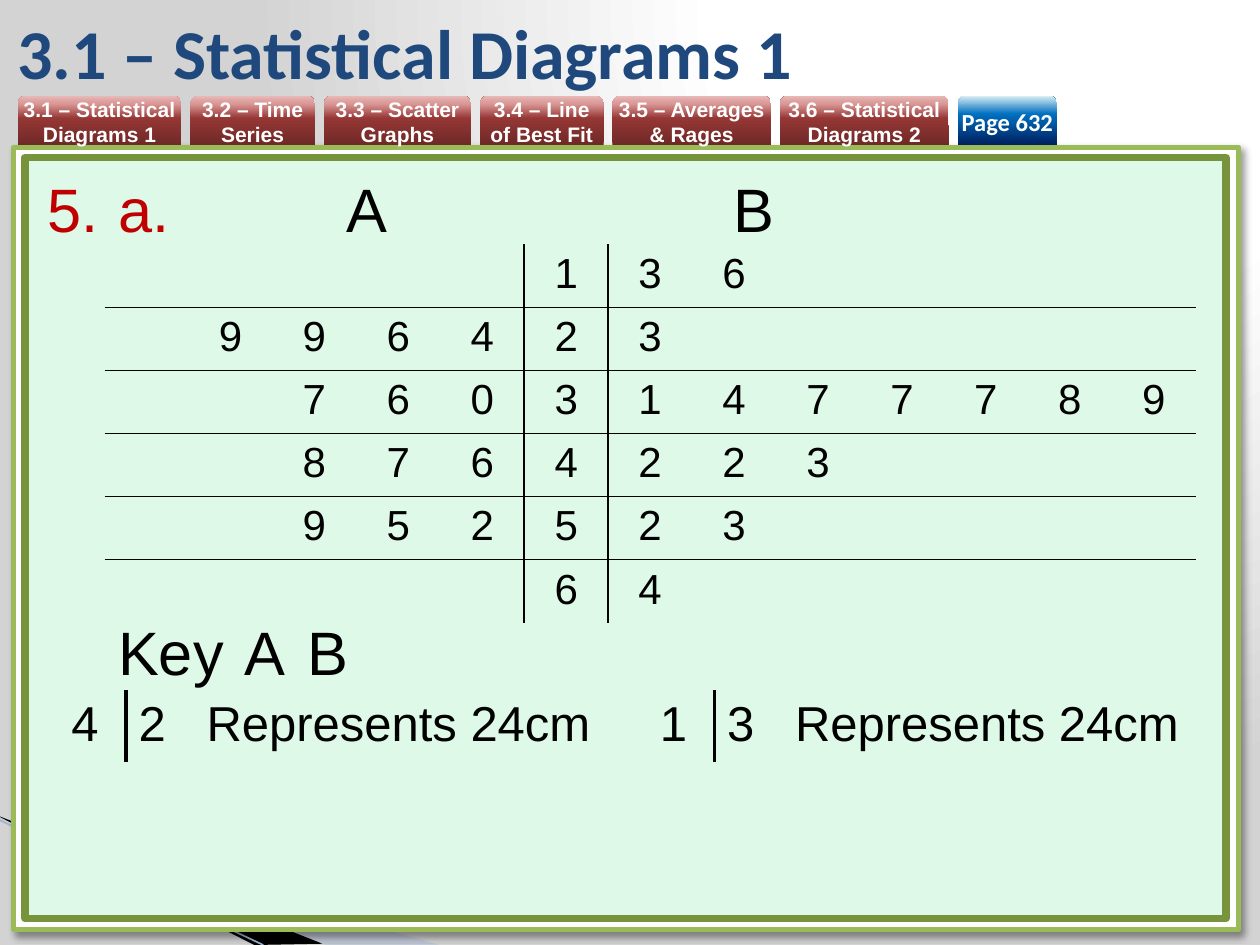
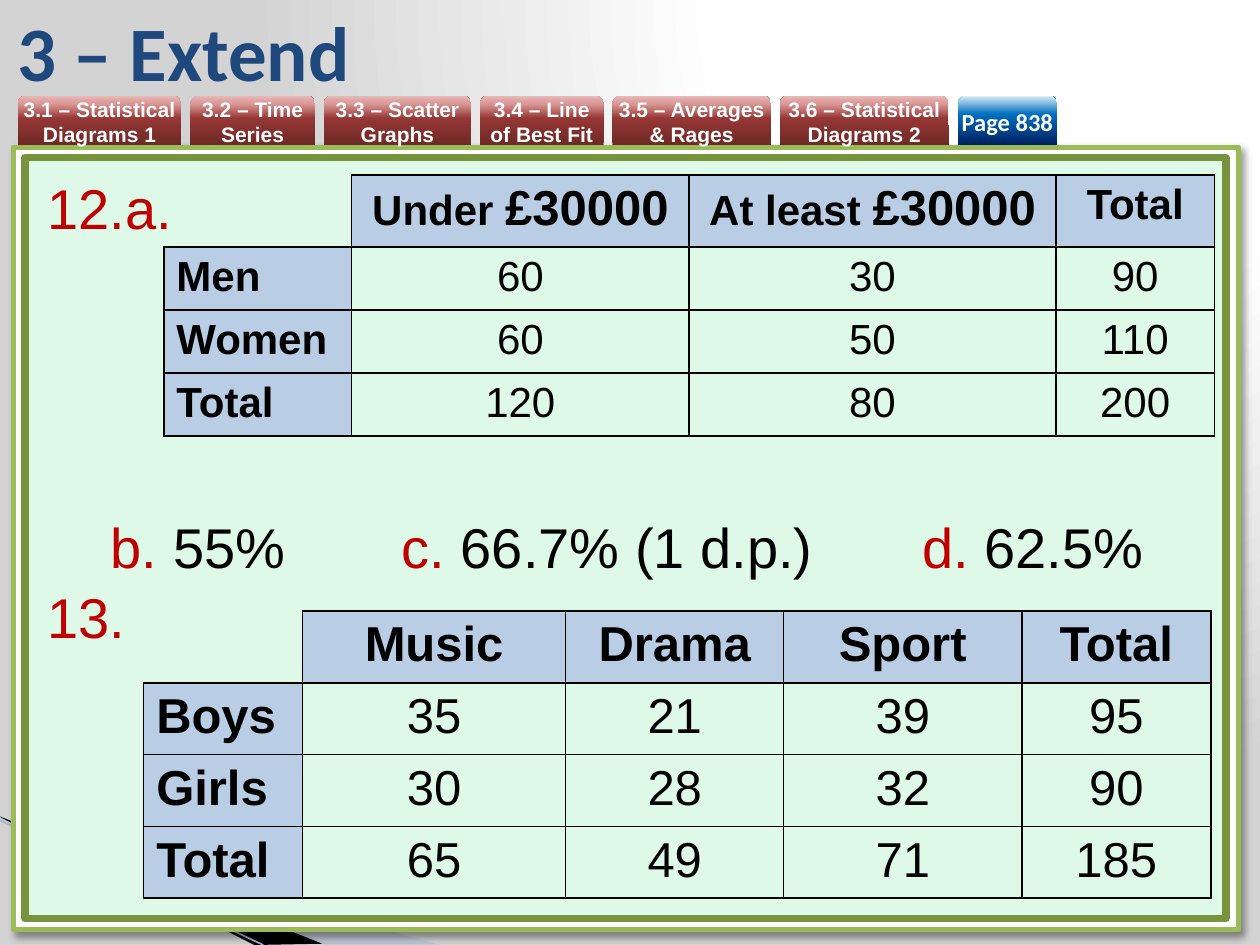
from pptx import Presentation
from pptx.dml.color import RGBColor
from pptx.enum.shapes import MSO_CONNECTOR, MSO_SHAPE
from pptx.enum.text import MSO_ANCHOR, PP_ALIGN
from pptx.oxml import parse_xml
from pptx.oxml.ns import nsdecls, qn
from pptx.util import Inches, Pt

C = {"black": "000000", "white": "FFFFFF", "red": "C00000", "title": "1F497D",
     "ray": "A7B9DB", "ray_line": "9EB3D6", "frame": "9BBB59", "panel": "DFF9E8",
     "panel_line": "77933C", "head": "B9CDE5"}
UP = '<a:lin ang="16200000" scaled="0"/>'
CORNER = '<a:path path="circle"><a:fillToRect l="65000" t="0" r="0" b="98000"/></a:path>'
GRADIENTS = {
    "page": ([(0, "FFFFFF"), (40, "FFFFFF"), (100, "D3D3D3")], CORNER),
    "topic": ([(0, "6F2927"), (54, "953735"), (83, "D99694"), (100, "E6B9B8")], UP),
    "number": ([(0, "002060"), (63, "0070C0"), (100, "DBEEF4")], UP),
}
TOPICS = [("3.1 – Statistical Diagrams 1", 1.3), ("3.2 – Time Series", 0.99),
          ("3.3 – Scatter Graphs", 1.17), ("3.4 – Line of Best Fit", 0.98),
          ("3.5 – Averages & Rages", 1.26), ("3.6 – Statistical Diagrams 2", 1.34)]
NO_STYLE = "{2D5ABB26-0587-4C30-8999-92F81FD0307C}"

# Slide grid: 10 columns by 7.5 rows
prs = Presentation()
prs.slide_width, prs.slide_height = Inches(10), Inches(7.5)
COL = prs.slide_width / 10


def grid(*units):
    return [round(u * COL) for u in units]


def write(p, runs, size, color="black", bold=False, font="Arial", align=None):
    """Add runs of (text, changed colour or size) to a paragraph."""
    p.alignment = align
    for text, change in runs:
        r = p.add_run()
        r.text = text
        r.font.name, r.font.bold = font, bold
        r.font.size = Pt(change if isinstance(change, int) else size)
        r.font.color.rgb = RGBColor.from_string(C[change if isinstance(change, str) else color])


# Stem-and-leaf rows: leaves of A, stem, leaves of B
STEMS = [("", "1", "36"), ("9964", "2", "3"), ("760", "3", "1477789"),
         ("876", "4", "223"), ("952", "5", "23"), ("", "6", "4")]
stem_rows = [list(a.rjust(5) + stem + b.ljust(7)) for a, stem, b in STEMS]
stem = dict(kind="stem", at=(0.83, 1.94), cols=[8.66 / 13] * 13, rows=[0.5] * 6,
            size=24, line=1, cells=stem_rows)
keys = [dict(kind="key", at=(left, 5.48), cols=[0.65, 3.91], rows=[0.57], size=28,
             line=2.25, cells=[[number, leaf + "\tRepresents 24cm"]])
        for left, number, leaf in [(0.35, "4", "2"), (5.02, "1", "3")]]
salaries = dict(kind="two-way", at=(1.3, 1.39), cols=[1.49, 2.68, 2.91, 1.26],
                rows=[0.57] + [0.5] * 3, size=24, line=1, cells=[
                    ["", [("Under ", None), ("£30000", 28)],
                     [("At least ", None), ("£30000", 28)], "Total"],
                    ["Men", "60", "30", "90"],
                    ["Women", "60", "50", "110"],
                    ["Total", "120", "80", "200"]])
activities = dict(kind="two-way", at=(1.14, 4.85), cols=[1.26, 2.09, 1.73, 1.89, 1.5],
                  rows=[0.57] * 4, size=28, line=1, cells=[
                      ["", "Music", "Drama", "Sport", "Total"],
                      ["Boys", "35", "21", "39", "95"],
                      ["Girls", "30", "28", "32", "90"],
                      ["Total", "65", "49", "71", "185"]])

# Paragraphs: space before, left margin, hanging indent, numbering, tab stops, runs
SLIDES = [
    dict(title="3.1 – Statistical Diagrams 1", title_size=40, page="Page 632",
         top=1.31, height=4.22, size=35, tables=[stem] + keys, paragraphs=[
             (0, 0.56, 0.56, ("arabicPeriod", 5), [2.37, 5.44],
              [("a.", "red"), ("\tA\tB", None)]),
             (211, 0.56, 0, None, [2.48, 5.44], [("Key\tA\tB", None)])]),
    dict(title="3 – Extend", title_size=44, page="Page 838",
         top=1.33, height=3.87, size=32, tables=[salaries, activities], paragraphs=[
             (0, 0.57, 0.57, ("arabicPeriod", 12), [], [("a.", "red")]),
             (155, 1, 0.5, ("alphaLcPeriod", 2), [2.81, 6.94],
              [("55%\t", None), ("c.", "red"), (" 66.7% (1 d.p.)\t", None),
               ("d.", "red"), (" 62.5%", None)]),
             (1.5, 0, 0, None, [], [("13.", "red")])]),
]

for page in SLIDES:
    s = prs.slides.add_slide(prs.slide_layouts[6])
    s.background.fill.gradient()
    gradients = [(s._element, "page")]

    # Rays in the lower left corner
    for color, alpha, points in [
            ("ray", 40, [(0, 6.5), (3.49, 7.5), (2.59, 7.5), (0, 6.49)]),
            ("black", 100, [(0, 6.48), (2.56, 7.49), (2.02, 7.5), (0.01, 6.49)])]:
        corners = [grid(*pt) for pt in points]
        outline = s.shapes.build_freeform(*corners[0])
        outline.add_line_segments(corners[1:], close=True)
        sp = outline.convert_to_shape()
        sp.shadow.inherit = False
        sp.fill.solid()
        sp.fill.fore_color.rgb = RGBColor.from_string(C[color])
        sp.line.fill.background()
        if alpha < 100:
            tint = next(sp._element.spPr.iter(qn("a:srgbClr")))
            tint.append(parse_xml(f'<a:alpha {nsdecls("a")} val="{alpha * 1000}"/>'))
    ray = s.shapes.add_connector(MSO_CONNECTOR.STRAIGHT, *grid(0, 6.51, 2.09, 7.5))
    ray.line.color.rgb = RGBColor.from_string(C["ray_line"])
    ray.line.width = Pt(0.95)
    ray._element.spPr.append(parse_xml(f'<a:effectLst {nsdecls("a")}/>'))

    # Frame with a shadow, and the panel inside it
    for box, fill, line, width in [
            ((0.11, 1.17, 9.72, 6.21), "white", "frame", 3),
            ((0.2, 1.25, 9.53, 6.04), "panel", "panel_line", 4.33)]:
        sp = s.shapes.add_shape(MSO_SHAPE.RECTANGLE, *grid(*box))
        sp.shadow.inherit = False
        sp.fill.solid()
        sp.fill.fore_color.rgb = RGBColor.from_string(C[fill])
        sp.line.color.rgb = RGBColor.from_string(C[line])
        sp.line.width = Pt(width)
        if line == "frame":
            sp._element.spPr.find(qn("a:effectLst")).append(parse_xml(
                f'<a:outerShdw {nsdecls("a")} blurRad="50800" dist="38100" dir="2700000" '
                f'algn="tl" rotWithShape="0"><a:srgbClr val="{C["black"]}">'
                '<a:alpha val="40000"/></a:srgbClr></a:outerShdw>'))

    # Topic tabs and page tab
    left = 0.14
    for text, width in TOPICS + [(page["page"], 0.79)]:
        is_page = text == page["page"]
        sp = s.shapes.add_shape(MSO_SHAPE.ROUND_2_SAME_RECTANGLE,
                                *grid(left, 0.76, width, 0.39))
        sp.shadow.inherit = False
        sp.fill.gradient()
        sp.line.fill.background()
        gradients.append((sp._element, "number" if is_page else "topic"))
        tf = sp.text_frame
        tf.margin_left = tf.margin_right = tf.margin_top = tf.margin_bottom = 0
        tf.vertical_anchor = MSO_ANCHOR.MIDDLE
        write(tf.paragraphs[0], [(text, None)], 14 if is_page else 12, "white", True,
              "Calibri" if is_page else "Arial", PP_ALIGN.CENTER)
        left += width + 0.07

    for element, name in gradients:
        stops, direction = GRADIENTS[name]
        marks = "".join(f'<a:gs pos="{pos * 1000}"><a:srgbClr val="{rgb}"/></a:gs>'
                        for pos, rgb in stops)
        old = next(element.iter(qn("a:gradFill")))
        old.getparent().replace(old, parse_xml(
            f'<a:gradFill {nsdecls("a")} rotWithShape="1"><a:gsLst>{marks}</a:gsLst>'
            f'{direction}</a:gradFill>'))

    # Title
    tf = s.shapes.add_textbox(*grid(0.04, 0.05, 8.43, 0.71)).text_frame
    tf.word_wrap = True
    tf.vertical_anchor = MSO_ANCHOR.MIDDLE
    write(tf.paragraphs[0], [(page["title"], None)], page["title_size"], "title", True,
          "Calibri")

    # Answers
    tf = s.shapes.add_textbox(*grid(0.28, page["top"], 9.37, page["height"])).text_frame
    tf.word_wrap = True
    for i, (space, margin, hang, number, tabs, runs) in enumerate(page["paragraphs"]):
        p = tf.add_paragraph() if i else tf.paragraphs[0]
        pPr = p._p.get_or_add_pPr()
        margin, hang = grid(margin, hang)
        pPr.set("marL", str(margin))
        pPr.set("indent", str(-hang))
        if space:
            p.space_before = Pt(space)
        if number:
            pPr.append(parse_xml(f'<a:buClr {nsdecls("a")}><a:srgbClr val="{C["red"]}"/></a:buClr>'))
            pPr.append(parse_xml(f'<a:buAutoNum {nsdecls("a")} type="{number[0]}" startAt="{number[1]}"/>'))
        if tabs:
            stops = "".join(f'<a:tab pos="{pos}" algn="l"/>' for pos in grid(*tabs))
            pPr.append(parse_xml(f'<a:tabLst {nsdecls("a")}>{stops}</a:tabLst>'))
        write(p, runs, page["size"])

    # Tables
    for t in page["tables"]:
        kind, last = t["kind"], len(t["rows"]) - 1
        size = grid(sum(t["cols"]), sum(t["rows"]))
        table = s.shapes.add_table(len(t["rows"]), len(t["cols"]), *grid(*t["at"]), *size).table
        table.first_row = table.horz_banding = False
        table._tbl.tblPr.find(qn("a:tableStyleId")).text = NO_STYLE
        for column, width in zip(table.columns, grid(*t["cols"])):
            column.width = width
        for row, height in zip(table.rows, grid(*t["rows"])):
            row.height = height
        for y, row in enumerate(t["cells"]):
            for x, content in enumerate(row):
                cell = table.cell(y, x)
                header = kind == "two-way" and (x == 0 or y == 0)
                corner = header and x == y

                # Borders by kind of table
                if kind == "stem":
                    sides = {4: "R", 5: "LR", 6: "L"}.get(x, "")
                    sides += ("T" if y > 0 else "") + ("B" if y < last else "")
                elif kind == "key":
                    sides = "RL"[x]
                else:
                    sides = "RB" if corner else "LRTB"
                tcPr = cell._tc.get_or_add_tcPr()
                for side in "LRTB":
                    paint = (f'<a:solidFill><a:srgbClr val="{C["black"]}"/></a:solidFill>'
                             if side in sides else "<a:noFill/>")
                    tcPr.append(parse_xml(f'<a:ln{side} {nsdecls("a")} w="{Pt(t["line"])}">'
                                          f'{paint}</a:ln{side}>'))
                if header and not corner:
                    cell.fill.solid()
                    cell.fill.fore_color.rgb = RGBColor.from_string(C["head"])
                else:
                    cell.fill.background()

                # Cell text
                runs = [(content.strip(), None)] if isinstance(content, str) else content
                if not runs[0][0]:
                    continue
                p = cell.text_frame.paragraphs[0]
                if "\t" in runs[0][0]:
                    p._p.get_or_add_pPr().append(parse_xml(
                        f'<a:tabLst {nsdecls("a")}><a:tab pos="{grid(0.54)[0]}" algn="l"/></a:tabLst>'))
                is_left = (kind == "two-way" and x == 0) or (kind == "key" and x == 1)
                write(p, runs, t["size"], bold=header,
                      align=PP_ALIGN.LEFT if is_left else PP_ALIGN.CENTER)

prs.save("out.pptx")
